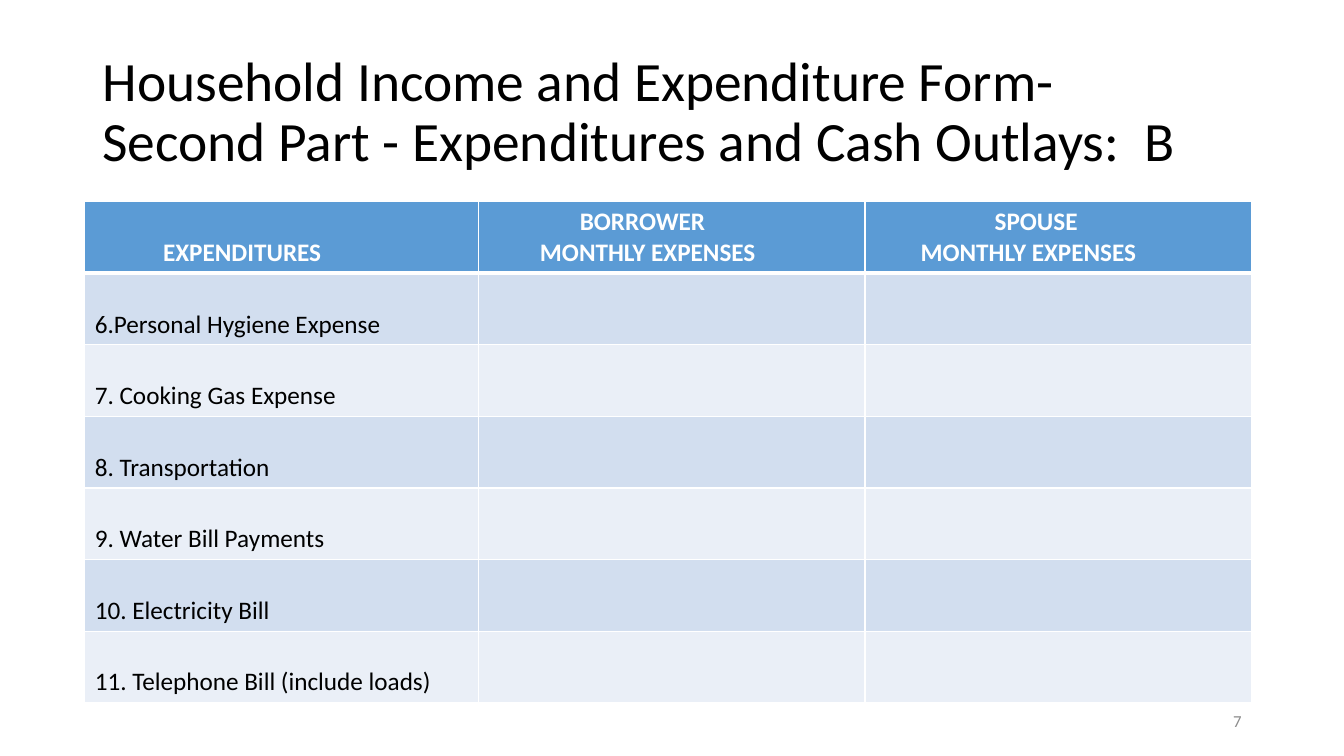
from lxml import etree
from pptx import Presentation
from pptx.dml.color import RGBColor
from pptx.enum import text
from pptx.oxml.ns import qn
from pptx.util import Pt

TITLE = ("Household Income and Expenditure Form-\v"
         "Second Part - Expenditures and Cash Outlays:  B")
# Each heading line: wording and left indent in points
HEADINGS = [
    [("EXPENDITURES", 48.8)],
    [("BORROWER", 65.1), ("MONTHLY EXPENSES", 36.6)],
    [("SPOUSE", 85.4), ("MONTHLY EXPENSES", 32.5)],
]
EXPENSES = [
    "6.Personal Hygiene Expense",
    "7. Cooking Gas Expense",
    "8. Transportation",
    "9. Water Bill Payments",
    "10. Electricity Bill",
    "11. Telephone Bill (include loads)",
]
PAGE_NUMBER = "7"

FONT = "Calibri"
BLACK = RGBColor(0x00, 0x00, 0x00)
WHITE = RGBColor(0xFF, 0xFF, 0xFF)
GREY = RGBColor(0x8C, 0x8C, 0x8C)
HEADER_BLUE = RGBColor(0x5B, 0x9B, 0xD5)
BANDS = [RGBColor(0xD2, 0xDE, 0xEF), RGBColor(0xEA, 0xEF, 0xF7)]

TABLE_LEFT, TABLE_TOP = 60.5, 144
COLUMN_WIDTHS = [281.4, 276, 276]
ROW_HEIGHT = 51.15


def set_font(para, size, color, bold=False):
    para.font.name = FONT
    para.font.size = Pt(size)
    para.font.color.rgb = color
    para.font.bold = bold


def set_borders(cell, bottom=1, top=1):
    """Draw white cell borders, with widths in points."""
    properties = cell._tc.get_or_add_tcPr()
    for side, width in (("L", 1), ("R", 1), ("T", top), ("B", bottom)):
        line = etree.SubElement(properties, qn(f"a:ln{side}"), w=str(Pt(width)))
        fill = etree.SubElement(line, qn("a:solidFill"))
        etree.SubElement(fill, qn("a:srgbClr"), val=str(WHITE))


def fill_cell(cell, lines, fill, color, bold):
    cell.vertical_anchor = text.MSO_ANCHOR.BOTTOM
    frame = cell.text_frame
    frame.text = "\n".join(wording for wording, _ in lines)
    for para, (_, indent) in zip(frame.paragraphs, lines):
        set_font(para, 18, color, bold)
        para._p.get_or_add_pPr().set("marL", str(Pt(indent)))
    cell.fill.solid()
    cell.fill.fore_color.rgb = fill


def add_title(page):
    title = page.shapes.title
    title.left, title.top, title.width, title.height = map(Pt, (66, 28.8, 828, 104.4))
    frame = title.text_frame
    frame.text = TITLE
    frame.word_wrap = True
    frame.auto_size = text.MSO_AUTO_SIZE.NONE
    frame.vertical_anchor = text.MSO_ANCHOR.MIDDLE
    para = frame.paragraphs[0]
    para.alignment = text.PP_ALIGN.LEFT
    para.line_spacing = 0.9
    set_font(para, 39.6, BLACK)


def add_expense_table(page):
    row_count = len(EXPENSES) + 1
    table = page.shapes.add_table(
        row_count, len(HEADINGS), Pt(TABLE_LEFT), Pt(TABLE_TOP),
        Pt(sum(COLUMN_WIDTHS)), Pt(ROW_HEIGHT * row_count)).table
    for column, width in zip(table.columns, COLUMN_WIDTHS):
        column.width = Pt(width)
    for row in table.rows:
        row.height = Pt(ROW_HEIGHT)

    for c, lines in enumerate(HEADINGS):
        cell = table.cell(0, c)
        set_borders(cell, bottom=3)
        fill_cell(cell, lines, HEADER_BLUE, WHITE, True)
    for r, expense in enumerate(EXPENSES, start=1):
        for c, wording in enumerate((expense, "", "")):
            cell = table.cell(r, c)
            set_borders(cell, top=3 if r == 1 else 1)
            fill_cell(cell, [(wording, 0)], BANDS[(r - 1) % 2], BLACK, False)


def add_page_number(page):
    box = page.shapes.add_textbox(Pt(678), Pt(500.5), Pt(216), Pt(28.8))
    frame = box.text_frame
    frame.word_wrap = True
    frame.vertical_anchor = text.MSO_ANCHOR.MIDDLE
    frame.text = PAGE_NUMBER
    para = frame.paragraphs[0]
    para.alignment = text.PP_ALIGN.RIGHT
    set_font(para, 12, GREY)


def main():
    deck = Presentation()
    deck.slide_width, deck.slide_height = Pt(960), Pt(540)
    page = deck.slides.add_slide(deck.slide_layouts.get_by_name("Title Only"))
    add_title(page)
    add_expense_table(page)
    add_page_number(page)
    deck.save("out.pptx")


if __name__ == "__main__":
    main()
